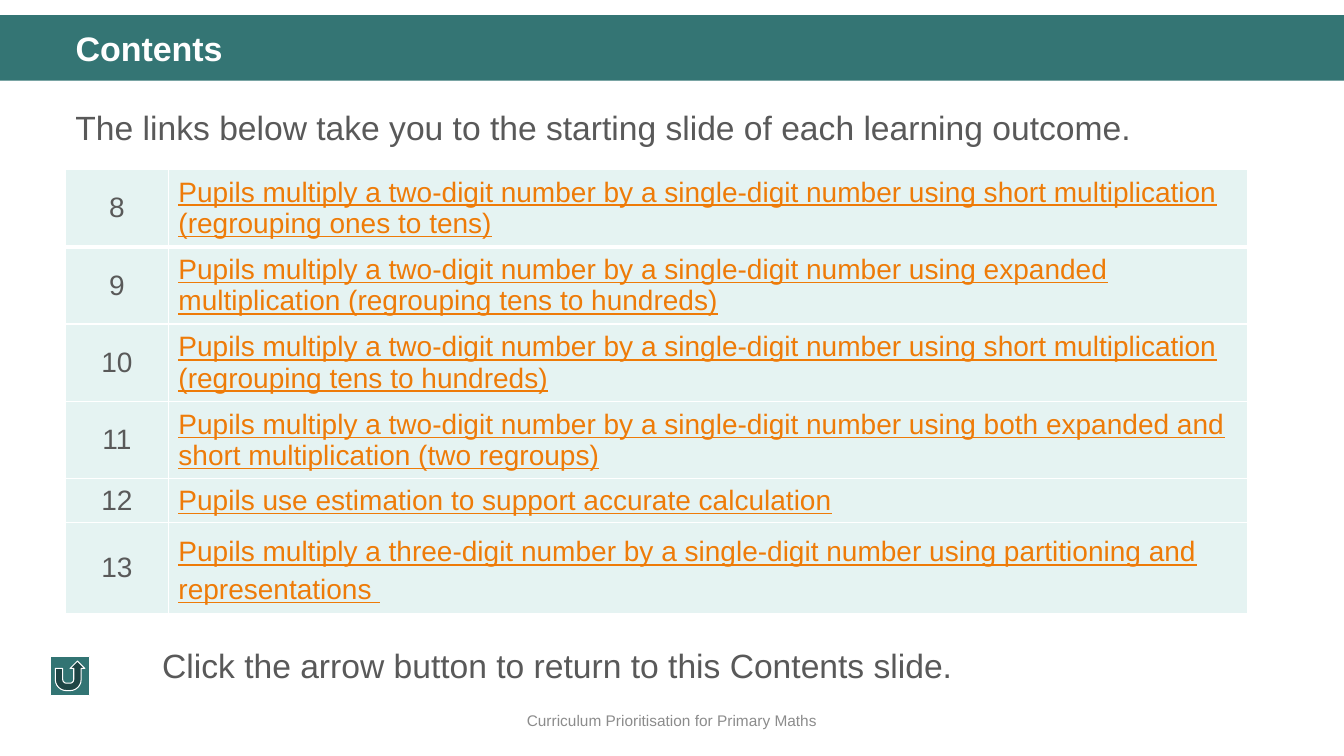
from lxml.etree import SubElement
from pptx import Presentation
from pptx.dml.color import RGBColor
from pptx.enum.shapes import MSO_SHAPE
from pptx.enum.text import MSO_ANCHOR, MSO_AUTO_SIZE, PP_ALIGN
from pptx.oxml.ns import qn
from pptx.util import Pt

PX = 9144
TEAL = RGBColor(0x34, 0x75, 0x74)
BUTTON = RGBColor(0x32, 0x74, 0x73)
PALE = RGBColor(0xE5, 0xF3, 0xF2)
ORANGE = RGBColor(0xEE, 0x7B, 0x08)
GREY = RGBColor(0x59, 0x59, 0x59)
SILVER = RGBColor(0x8C, 0x8C, 0x8C)
WHITE = RGBColor(0xFF, 0xFF, 0xFF)

SHORT = "Pupils multiply a two-digit number by a single-digit number using "
GOALS = [
    ("8", SHORT + "short multiplication (regrouping ones to tens)", 72),
    ("9", SHORT + "expanded multiplication (regrouping tens to hundreds)", 72),
    ("10", SHORT + "short multiplication (regrouping tens to hundreds)", 72),
    ("11", SHORT + "both expanded and short multiplication (two regroups)", 72),
    ("12", "Pupils use estimation to support accurate calculation", 41),
    ("13", "Pupils multiply a three-digit number by a single-digit number "
           "using partitioning and representations ", 84),
]


def emu(*sizes):
    return [size * PX for size in sizes]


def write(frame, text, size, color, bold=False, line=False, align=PP_ALIGN.LEFT):
    frame.text = text
    frame.word_wrap = True
    para = frame.paragraphs[0]
    para.alignment = align
    font = para.runs[0].font
    font.name = "Arial"
    font.size = Pt(size)
    font.color.rgb = color
    font.bold = bold
    font.underline = line
    return para


def add_text(slide, box, text, size, color, align=PP_ALIGN.LEFT):
    frame = slide.shapes.add_textbox(*emu(*box)).text_frame
    write(frame, text, size, color, align=align)
    return frame


def add_block(slide, kind, box, color):
    shape = slide.shapes.add_shape(kind, *emu(*box))
    shape.shadow.inherit = False
    shape.fill.solid()
    shape.fill.fore_color.rgb = color
    shape.line.fill.background()
    return shape


def add_header(slide, box):
    left, top, width, height = box
    band = add_block(slide, MSO_SHAPE.RECTANGLE, box, TEAL)
    title = slide.shapes.title
    band.element.addnext(title.element)
    title.left, title.top, title.width, title.height = emu(
        left + 65, top + 12, width - 115, height - 18)
    frame = title.text_frame
    frame.auto_size = MSO_AUTO_SIZE.NONE
    frame.vertical_anchor = MSO_ANCHOR.TOP
    write(frame, "Contents", 24.3, WHITE, bold=True).line_spacing = 0.9


def add_rules(cell, top, bottom):
    props = cell._tc.get_or_add_tcPr()
    for spot, (side, width) in enumerate(
            [("L", 1), ("R", 1), ("T", top), ("B", bottom)]):
        rule = SubElement(props, qn("a:ln" + side), w=str(Pt(width)))
        fill = SubElement(rule, qn("a:solidFill"))
        SubElement(fill, qn("a:srgbClr"), val=str(WHITE))
        props.insert(spot, rule)


def add_goals(slide, box):
    table = slide.shapes.add_table(len(GOALS), 2, *emu(*box)).table
    table.first_row = False
    table.horz_banding = False
    for col, width in zip(table.columns, emu(102, box[2] - 102)):
        col.width = width
    for index, (number, goal, height) in enumerate(GOALS):
        row = table.rows[index]
        row.height = height * PX
        for cell in row.cells:
            cell.fill.solid()
            cell.fill.fore_color.rgb = PALE
            cell.vertical_anchor = MSO_ANCHOR.MIDDLE
            add_rules(cell, 3 if index == 1 else 1, 3 if index == 0 else 1)
        first, second = row.cells
        write(first.text_frame, number, 20, GREY, align=PP_ALIGN.CENTER)
        para = write(second.text_frame, goal, 20, ORANGE, line=True)
    para.line_spacing = 1.2


def add_intro(slide, box):
    frame = add_text(slide, box, "The links below take you to the starting "
                     "slide of each learning outcome.", 24, GREY)
    para = frame.paragraphs[0]
    para.line_spacing = 1.2
    para.space_before = Pt(10)


def add_return(slide, box):
    left, top, width, height = box
    button = add_block(slide, MSO_SHAPE.ACTION_BUTTON_RETURN,
                       (left, top + 16, 39, 39), BUTTON)
    button.line.color.rgb = WHITE
    button.line.width = Pt(0.75)
    add_text(slide, (left + 101, top, width - 101, height - 5),
             "Click the arrow button to return to this Contents slide.", 24, GREY)


def add_footer(slide, box):
    frame = add_text(slide, box, "Curriculum Prioritisation for Primary Maths",
                     11, SILVER, PP_ALIGN.CENTER)
    frame.vertical_anchor = MSO_ANCHOR.MIDDLE


def main():
    deck = Presentation()
    deck.slide_width, deck.slide_height = emu(1333, 750)
    slide = deck.slides.add_slide(deck.slide_layouts[5])
    add_header(slide, (0, 15, 1333, 65))
    add_footer(slide, (0, 695, 1333, 40))
    add_intro(slide, (65, 93, 1218, 60))
    add_goals(slide, (65, 168, 1172, 413))
    add_return(slide, (50, 635, 1233, 55))
    deck.save("out.pptx")


if __name__ == "__main__":
    main()
